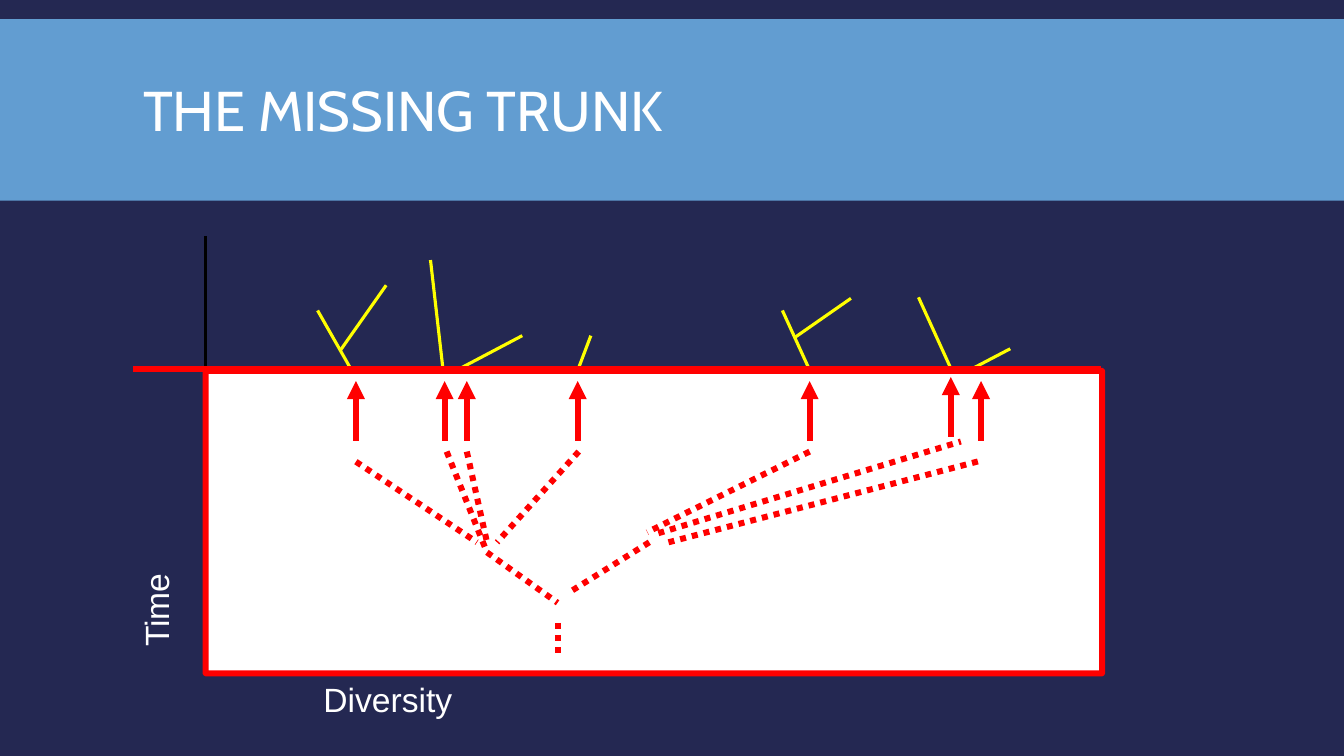
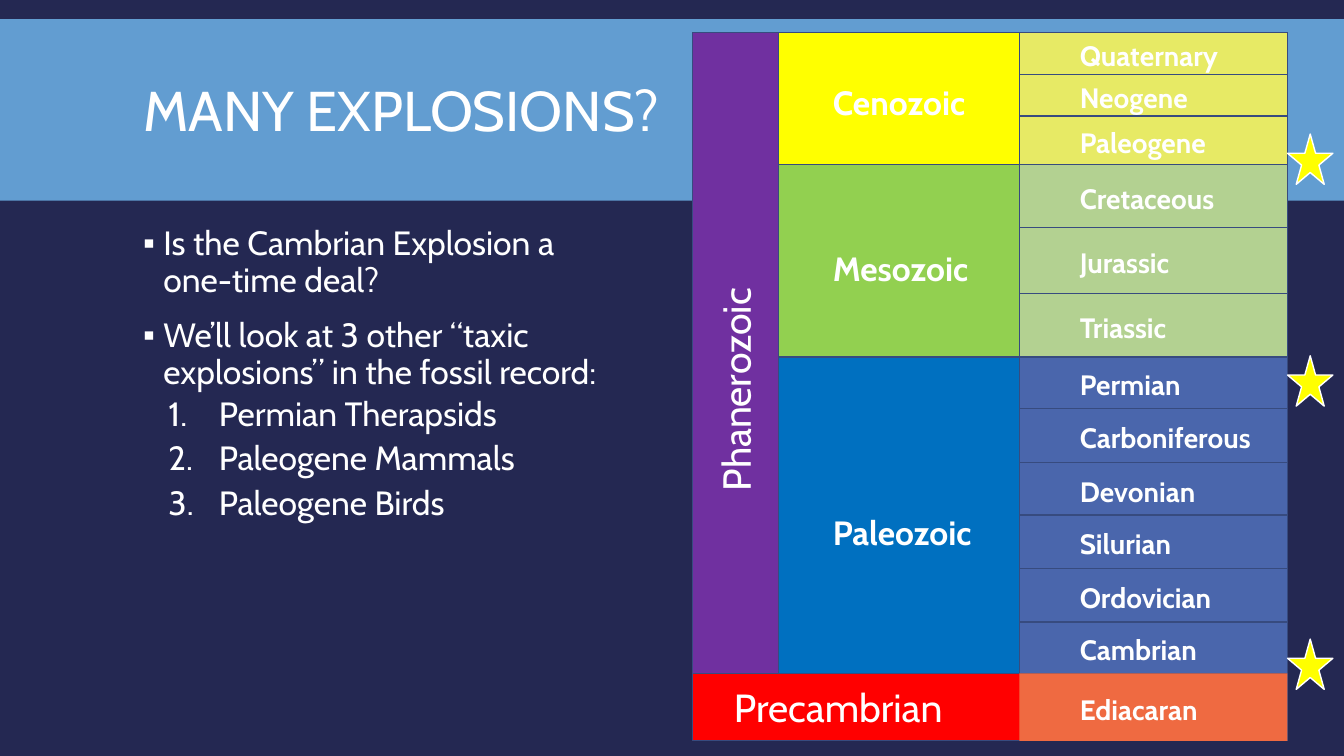
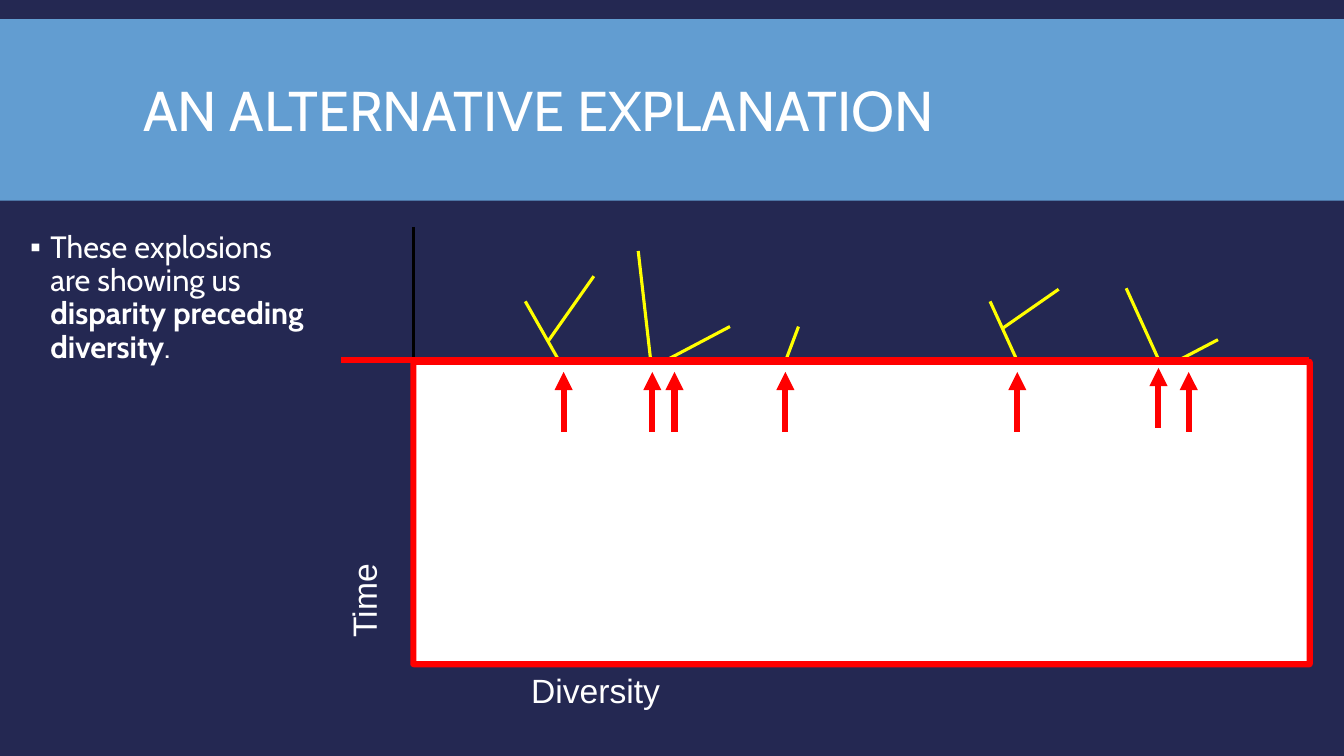
from lxml.etree import SubElement
from pptx import Presentation
from pptx.dml.color import RGBColor
from pptx.enum.dml import MSO_LINE
from pptx.enum.shapes import MSO_CONNECTOR, MSO_SHAPE
from pptx.enum.text import MSO_ANCHOR, MSO_AUTO_SIZE, PP_ALIGN
from pptx.oxml.ns import qn
from pptx.util import Inches, Pt

COLORS = {
    "navy": "242852", "band": "629DD1", "white": "FFFFFF", "black": "000000",
    "red": "FF0000", "yellow": "FFFF00", "green": "92D050", "blue": "0070C0",
    "purple": "7030A0", "slate": "4A66AC", "edge": "374B7F", "coral": "EF6A41",
    "mist": "D8D3D9", "haze": "CCD2DD",
}
HEAVY, THIN = 4.31, 2.25

TITLE_BOX = (1.32, 0.31, 10.7, 1.65)
TITLE_FRAME = {"auto_size": MSO_AUTO_SIZE.NONE, "vertical_anchor": MSO_ANCHOR.MIDDLE}
TITLE_PARAGRAPH = {"alignment": PP_ALIGN.LEFT, "line_spacing": 0.85}
LEVELS = [
    {"margin": 0.2, "indent": -0.2, "before": 12, "after": 2,
     "bullet": ("a:buChar", {"char": "▪"})},
    {"margin": 0.75, "indent": -0.5, "before": 2, "after": 4,
     "bullet": ("a:buAutoNum", {"type": "arabicPeriod"})},
]

# Tree lines: x1, y1, x2, y2 in inches from the top left corner of the white box
BRANCHES = [
    (6.3, 0.67, 5.72, -0.6), (1.68, 0.42, 3.14, -0.35), (6.51, 0.55, 7.98, -0.22),
    (3.48, 0.55, 3.82, -0.35), (7.42, 0.04, 7.07, -0.73), (5.84, -0.33, 6.4, -0.72),
    (2.36, 0.04, 2.23, -1.1), (1.34, -0.21, 1.79, -0.85), (1.69, 0.42, 1.11, -0.6),
]
ARROW_TIPS = [(1.49, 0.1), (2.37, 0.1), (2.59, 0.1), (3.69, 0.1),
              (5.99, 0.1), (7.39, 0.06), (7.69, 0.1)]
ROOTS = [
    (1.49, 0.9, 2.69, 1.7), (2.39, 0.8, 2.79, 1.8), (2.59, 0.8, 2.79, 1.7),
    (3.7, 0.8, 2.89, 1.7), (5.99, 0.8, 4.38, 1.6), (4.49, 1.61, 7.49, 0.7),
    (4.59, 1.7, 7.69, 0.89), (4.4, 1.7, 3.6, 2.2), (2.79, 1.8, 3.49, 2.3),
    (3.49, 2.5, 3.49, 2.8),
]

# Each era is as tall as its periods together; drop lowers its label
ERAS = [
    {"name": "Cenozoic", "fill": "yellow", "drop": 0.04, "period_fill": "haze", "alpha": 46,
     "periods": [("Quaternary", 0.42), ("Neogene", 0.41), ("Paleogene", 0.48)]},
    {"name": "Mesozoic", "fill": "green", "drop": 0.07, "period_fill": "mist", "alpha": 48,
     "periods": [("Cretaceous", 0.63), ("Jurassic", 0.65), ("Triassic", 0.63)]},
    {"name": "Paleozoic", "fill": "blue", "drop": 0.17, "period_fill": "slate",
     "periods": [("Permian", 0.51), ("Carboniferous", 0.54), ("Devonian", 0.52),
                 ("Silurian", 0.53), ("Ordovician", 0.53), ("Cambrian", 0.51)]},
    {"name": "Precambrian", "fill": "red", "period_fill": "coral", "period_line": None,
     "x": 0, "inset": 0.41, "size": 28, "bold": False, "periods": [("Ediacaran", 0.67)]},
]
EXPLOSION_TOPS = [1.01, 3.21, 6.02]


def rgb(name):
    return RGBColor.from_string(COLORS[name])


def set_all(target, values):
    for name, value in values.items():
        setattr(target, name, value)


def place(shape, box):
    set_all(shape, dict(zip(("left", "top", "width", "height"), map(Inches, box))))


def add_run(p, text, size, font="Cabin", bold=False):
    r = p.add_run()
    r.text = text
    set_all(r.font, {"name": font, "size": Pt(size), "bold": bold})
    r.font.color.rgb = rgb("white")


def add_box(slide, box, fill, line="edge", width=1, kind=MSO_SHAPE.RECTANGLE, alpha=None):
    sp = slide.shapes.add_shape(kind, *map(Inches, box))
    sp.shadow.inherit = False
    sp.fill.solid()
    sp.fill.fore_color.rgb = rgb(fill)
    if alpha:
        color = sp.element.spPr.find(qn("a:solidFill"))[0]
        SubElement(color, qn("a:alpha"), val=str(alpha * 1000))
    if line:
        sp.line.color.rgb = rgb(line)
        sp.line.width = Pt(width)
    else:
        sp.line.fill.background()
    return sp


def add_cell(slide, box, text, fill, size, inset, bold=True, drop=0, **look):
    """Coloured box with a left-aligned label, lowered by drop inches."""
    tf = add_box(slide, box, fill, **look).text_frame
    set_all(tf, {"margin_left": Inches(inset), "margin_right": 0,
                 "margin_top": Inches(2 * drop), "margin_bottom": 0,
                 "word_wrap": False, "vertical_anchor": MSO_ANCHOR.MIDDLE})
    tf.paragraphs[0].alignment = PP_ALIGN.LEFT
    add_run(tf.paragraphs[0], text, size, bold=bold)


def add_label(slide, box, text, size, font="Cabin", rotation=0):
    sp = slide.shapes.add_textbox(*map(Inches, box))
    sp.rotation = rotation
    sp.text_frame.word_wrap = True
    add_run(sp.text_frame.paragraphs[0], text, size, font)


def add_line(slide, origin, ends, color, width, dash=None, arrow=False):
    x, y = origin
    x1, y1, x2, y2 = ends
    c = slide.shapes.add_connector(
        MSO_CONNECTOR.STRAIGHT, *map(Inches, (x + x1, y + y1, x + x2, y + y2)))
    c.line.color.rgb = rgb(color)
    c.line.width = Pt(width)
    if dash:
        c.line.dash_style = dash
    spPr = c.element.spPr
    if arrow:
        SubElement(spPr.find(qn("a:ln")), qn("a:headEnd"), type="triangle")
    SubElement(spPr, qn("a:effectLst"))


def add_slide(prs, layout, title):
    slide = prs.slides.add_slide(prs.slide_layouts.get_by_name(layout))
    sp = slide.shapes.title
    place(sp, TITLE_BOX)
    set_all(sp.text_frame, TITLE_FRAME)
    p = sp.text_frame.paragraphs[0]
    set_all(p, TITLE_PARAGRAPH)
    add_run(p, title, 40)
    return slide


def style_master(prs, slide):
    """Give the master the navy ground and the title band, drawn on slide first."""
    master = prs.slide_master
    master.background.fill.solid()
    master.background.fill.fore_color.rgb = rgb("navy")
    band = add_box(slide, (0, 0.19, 13.33, 1.8), "band", line=None)
    master.shapes.element.insert(2, band.element)


def fill_body(slide, box, items, size):
    """items: (level, [(text, bold), ...]) for each paragraph."""
    body = slide.placeholders[1]
    place(body, box)
    tf = body.text_frame
    tf.auto_size = MSO_AUTO_SIZE.NONE
    for i, (level, runs) in enumerate(items):
        p = tf.add_paragraph() if i else tf.paragraphs[0]
        style = LEVELS[level]
        p.level = level
        pPr = p._p.get_or_add_pPr()
        pPr.set("marL", str(Inches(style["margin"])))
        pPr.set("indent", str(Inches(style["indent"])))
        SubElement(SubElement(pPr, qn("a:buClr")), qn("a:srgbClr"), val=COLORS["white"])
        tag, attributes = style["bullet"]
        SubElement(pPr, qn(tag), attributes)
        set_all(p, {"line_spacing": 0.9, "space_after": Pt(style["after"]),
                    "space_before": Pt(style["before"] if i else 0)})
        for text, bold in runs:
            add_run(p, text, size, bold=bold)


def draw_tree(slide, origin, roots=()):
    """Diversity through time; origin is the top left corner of the white box."""
    x, y = origin
    add_line(slide, origin, (0, -1.34, 0, 2.92), "black", THIN)
    add_label(slide, (x - 2.43, y + 0.64, 3.88, 0.51), "Time", 24, "Arial", 270)
    add_label(slide, (x + 1.07, y + 3.01, 6.13, 0.51), "Diversity", 24, "Arial")
    for branch in BRANCHES:
        add_line(slide, origin, branch, "yellow", THIN)
    add_line(slide, origin, (-0.72, -0.02, 8.88, -0.02), "red", HEAVY)
    box = add_box(slide, (x, y, 8.89, 3), "white", "red", HEAVY, MSO_SHAPE.ROUNDED_RECTANGLE)
    box.adjustments[0] = 0.001
    for tip_x, tip_y in ARROW_TIPS:
        add_line(slide, origin, (tip_x, tip_y, tip_x, tip_y + 0.6), "red", HEAVY, arrow=True)
    for root in roots:
        add_line(slide, origin, root, "red", HEAVY, dash=MSO_LINE.ROUND_DOT)


def draw_time_scale(slide, box):
    """Eon, era and period columns, with a star beside each explosion."""
    left, top, width, height = box
    era_x, period_x = 0.85, 3.24
    add_box(slide, box, "purple")
    add_label(slide, (left - 0.85, top + 3.09, 2.55, 0.57), "Phanerozoic", 28, rotation=270)
    y = top
    for era in ERAS:
        x = era.get("x", era_x)
        era_height = sum(h for _, h in era["periods"])
        add_cell(slide, (left + x, y, width - x, era_height), era["name"], era["fill"],
                 era.get("size", 24), era.get("inset", 0.54), era.get("bold", True),
                 era.get("drop", 0))
        for period, h in era["periods"]:
            add_cell(slide, (left + period_x, y, width - period_x, h), period,
                     era["period_fill"], 20, 0.6, drop=0.02,
                     line=era.get("period_line", "edge"), alpha=era.get("alpha"))
            y += h
    for star_top in EXPLOSION_TOPS:
        add_box(slide, (left + width, top + star_top, 0.45, 0.5), "yellow", "white",
                kind=MSO_SHAPE.STAR_5_POINT)


def main():
    prs = Presentation()
    prs.slide_width, prs.slide_height = Inches(13.33), Inches(7.5)

    trunk = add_slide(prs, "Title Only", "THE MISSING TRUNK")
    style_master(prs, trunk)
    draw_tree(trunk, (2.04, 3.68), ROOTS)

    explosions = add_slide(prs, "Title and Content", "MANY EXPLOSIONS?")
    fill_body(explosions, (1.32, 2.2, 4.82, 4.6), [
        (0, [("Is the Cambrian Explosion a one-time deal?", False)]),
        (0, [("We’ll look at 3 other “taxic explosions” in the fossil record:", False)]),
        (1, [("Permian Therapsids", False)]),
        (1, [("Paleogene Mammals", False)]),
        (1, [("Paleogene Birds", False)]),
    ], 24)
    draw_time_scale(explosions, (6.87, 0.32, 5.9, 7.03))

    alternative = add_slide(prs, "Title and Content", "AN ALTERNATIVE EXPLANATION")
    fill_body(alternative, (0.2, 2.25, 2.99, 4.6), [
        (0, [("These explosions are showing us ", False),
             ("disparity preceding diversity", True), (".", False)]),
    ], 22)
    draw_tree(alternative, (4.1, 3.59))

    prs.save("out.pptx")


if __name__ == "__main__":
    main()
